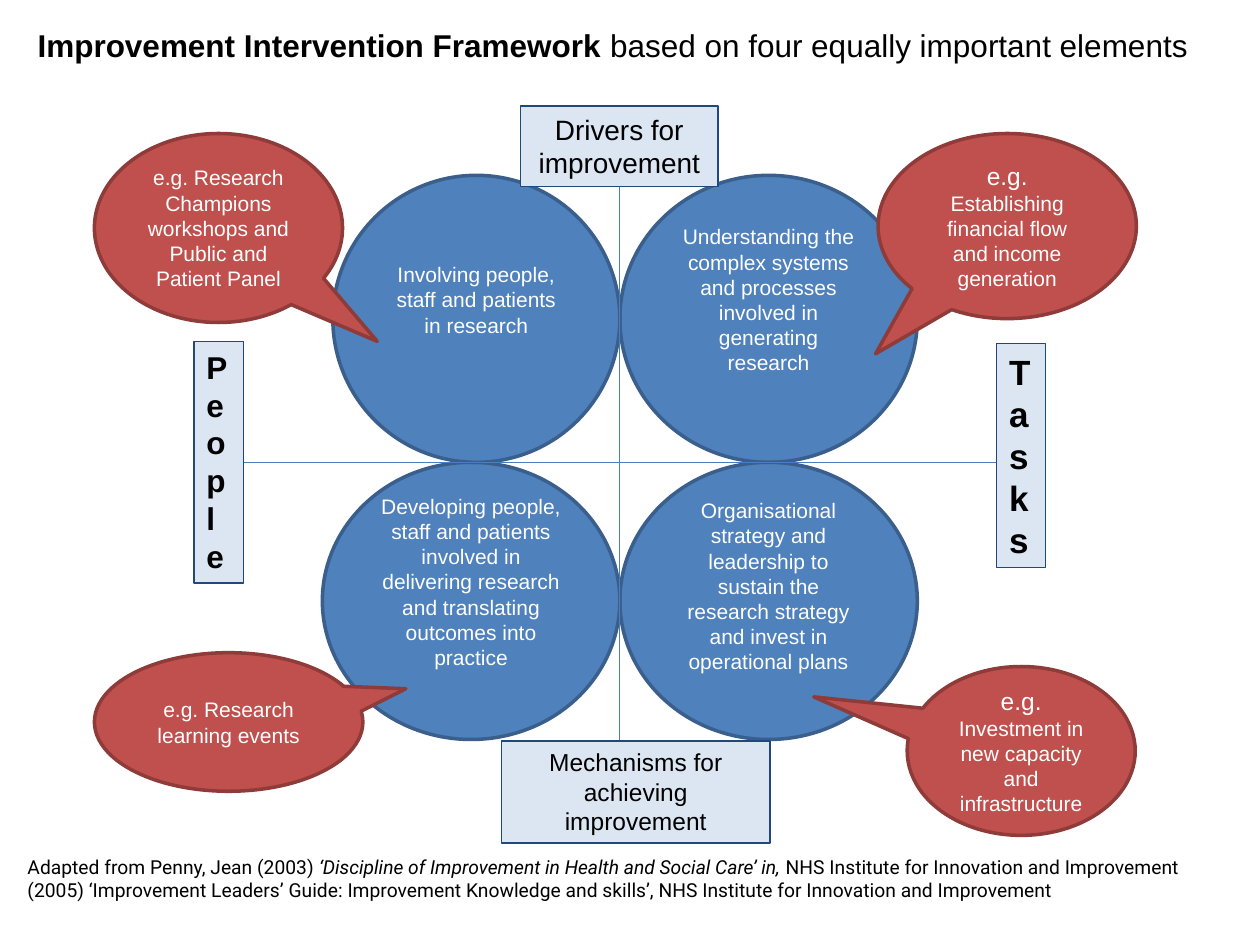
from lxml.etree import SubElement
from pptx import Presentation
from pptx.dml.color import RGBColor
from pptx.enum.shapes import MSO_CONNECTOR, MSO_SHAPE
from pptx.enum.text import MSO_ANCHOR, MSO_AUTO_SIZE, PP_ALIGN
from pptx.oxml.ns import qn
from pptx.util import Pt

BLUE = RGBColor(0x4F, 0x81, 0xBD)
BLUE_EDGE = RGBColor(0x3A, 0x5F, 0x8C)
RED = RGBColor(0xC0, 0x50, 0x4D)
RED_EDGE = RGBColor(0x8E, 0x3B, 0x39)
PALE = RGBColor(0xDC, 0xE6, 0xF2)
NAVY = RGBColor(0x1F, 0x49, 0x7D)
AXIS_BLUE = RGBColor(0x4B, 0x7E, 0xBC)
WHITE = RGBColor(0xFF, 0xFF, 0xFF)
BLACK = RGBColor(0, 0, 0)

CENTRE_X, CENTRE_Y = 354.2, 264.2
ELEMENT_WIDTH = 170
UPPER_HEIGHT, LOWER_HEIGHT = 164, 158.4
PEOPLE_HEIGHT = 138
RIGHT_SIDE = 3

# Left, top, width, height, space kept free below the text, text
ELEMENTS = [
    (CENTRE_X, CENTRE_Y - UPPER_HEIGHT, ELEMENT_WIDTH, UPPER_HEIGHT, 22,
     "Understanding the complex systems and processes involved in generating research"),
    (CENTRE_X, CENTRE_Y, ELEMENT_WIDTH, LOWER_HEIGHT, 17,
     "Organisational strategy and leadership to sustain the research strategy "
     "and invest in operational plans"),
    (CENTRE_X - ELEMENT_WIDTH, CENTRE_Y, ELEMENT_WIDTH, LOWER_HEIGHT, 22,
     "Developing people, staff and patients involved in delivering research "
     "and translating outcomes into practice"),
    (CENTRE_X - UPPER_HEIGHT, CENTRE_Y - UPPER_HEIGHT, UPPER_HEIGHT, UPPER_HEIGHT, 22,
     "Involving people, staff and patients in research"),
]

# Left, top, width, height, pointer tip, runs
EXAMPLES = [
    (54, 373, 153.4, 79.2, (0.66, -0.24), [("e.g. Research learning events", {})]),
    (501.8, 76.3, 147.6, 105.8, (-0.51, 0.69),
     [("e.g. ", {"size": 14}),
      ("Establishing financial flow and income generation", {})]),
    (54, 76.3, 141.8, 108, (0.64, 0.6),
     [("e.g. Research Champions workshops and Public and Patient Panel", {})]),
    (518.4, 380.9, 130.3, 96.5, (-0.91, -0.32),
     [("e.g. ", {"size": 14}),
      ("Investment in new capacity and infrastructure", {})]),
]


def write_text(shape, paragraphs, size=12, font="Arial", color=BLACK, bold=False,
               align=PP_ALIGN.LEFT, anchor=MSO_ANCHOR.TOP, grow=False):
    """Fill a shape with paragraphs, each a list of (text, overrides) runs."""
    frame = shape.text_frame
    frame.word_wrap = True
    frame.vertical_anchor = anchor
    if grow:
        frame.auto_size = MSO_AUTO_SIZE.SHAPE_TO_FIT_TEXT
    for index, runs in enumerate(paragraphs):
        paragraph = frame.add_paragraph() if index else frame.paragraphs[0]
        paragraph.alignment = align
        for text, overrides in runs:
            run = paragraph.add_run()
            run.text = text
            run.font.name = font
            run.font.size = Pt(overrides.get("size", size))
            run.font.bold = overrides.get("bold", bold)
            run.font.italic = overrides.get("italic", False)
            run.font.color.rgb = color


def add_outlined(slide, preset, bounds, fill, edge, weight):
    shape = slide.shapes.add_shape(preset, *map(Pt, bounds))
    shape.shadow.inherit = False
    shape.fill.solid()
    shape.fill.fore_color.rgb = fill
    shape.line.color.rgb = edge
    shape.line.width = Pt(weight)
    return shape


def add_element(slide, bounds, space_below, text):
    circle = add_outlined(slide, MSO_SHAPE.OVAL, bounds, BLUE, BLUE_EDGE, 2)
    write_text(circle, [[(text, {})]], color=WHITE, align=PP_ALIGN.CENTER,
               anchor=MSO_ANCHOR.MIDDLE)
    circle.text_frame.margin_bottom = Pt(3.6 + space_below)


def add_example(slide, bounds, tip, runs):
    callout = add_outlined(slide, MSO_SHAPE.OVAL_CALLOUT, bounds, RED, RED_EDGE, 2)
    callout.adjustments[0], callout.adjustments[1] = tip
    write_text(callout, [runs], color=WHITE, align=PP_ALIGN.CENTER,
               anchor=MSO_ANCHOR.MIDDLE)


def add_axis(slide, *ends):
    axis = slide.shapes.add_connector(MSO_CONNECTOR.STRAIGHT, *map(Pt, ends))
    axis.line.color.rgb = AXIS_BLUE
    axis.line.width = Pt(0.75)
    SubElement(axis._element.spPr, qn("a:effectLst"))
    return axis


def add_axis_label(slide, bounds, lines, **text_format):
    label = add_outlined(slide, MSO_SHAPE.RECTANGLE, bounds, PALE, NAVY, 0.75)
    write_text(label, [[(line, {})] for line in lines], grow=True, **text_format)
    return label


def add_caption(slide, bounds, runs, **text_format):
    caption = slide.shapes.add_textbox(*map(Pt, bounds))
    write_text(caption, [runs], grow=True, **text_format)


def main():
    deck = Presentation()
    deck.slide_width, deck.slide_height = Pt(720), Pt(540)
    slide = deck.slides.add_slide(deck.slide_layouts[6])

    for *bounds, space_below, text in ELEMENTS:
        add_element(slide, bounds, space_below, text)

    add_axis(slide, CENTRE_X, 88.6, CENTRE_X, 434)
    people_to_tasks = add_axis(slide, 139, CENTRE_Y, 587, CENTRE_Y)
    people = add_axis_label(
        slide, (110.9, CENTRE_Y - PEOPLE_HEIGHT / 2, 28.1, PEOPLE_HEIGHT),
        ["People"], size=18, bold=True)
    people_to_tasks.begin_connect(people, RIGHT_SIDE)
    add_axis_label(slide, (569.5, 196.5, 28.1, 128), ["Tasks"], size=20, bold=True)
    add_axis_label(slide, (297.4, 60.5, 113, 46), ["Drivers for improvement"],
                   size=16, align=PP_ALIGN.CENTER)
    add_axis_label(slide, (286.6, 423.4, 153.4, 58.3),
                   ["Mechanisms for achieving", "improvement"],
                   size=14, align=PP_ALIGN.CENTER)

    for *bounds, tip, runs in EXAMPLES:
        add_example(slide, bounds, tip, runs)

    add_caption(slide, (14.4, 11.5, 697.7, 28.8), [
        ("Improvement Intervention Framework ", {"bold": True}),
        ("based on four equally important elements", {}),
    ], size=18)
    add_caption(slide, (8.6, 485.3, 680.4, 55.4), [
        ("Adapted from Penny, Jean (2003) ", {}),
        ("‘Discipline of Improvement in Health and Social Care’ in, ", {"italic": True}),
        ("NHS Institute for Innovation and Improvement (2005) ‘Improvement Leaders’ "
         "Guide: Improvement Knowledge and skills’, NHS Institute for Innovation "
         "and Improvement", {}),
    ], size=11, font="Roboto")

    deck.save("out.pptx")


if __name__ == "__main__":
    main()
